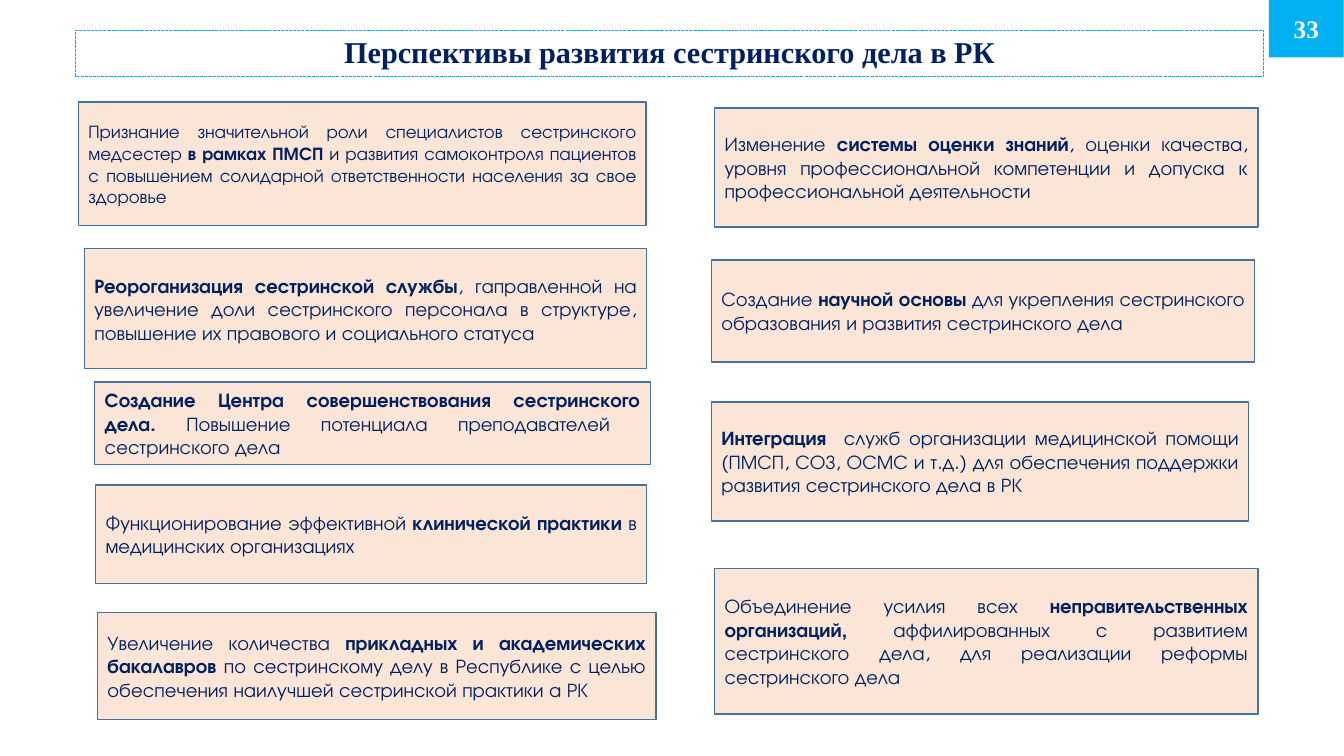
from pptx import Presentation
from pptx import util as u
from pptx.dml.color import RGBColor
from pptx.enum import dml, shapes, text

COLORS = {"navy": "002060", "cyan": "00B0F0", "peach": "FBE5D6", "steel": "43739E", "white": "FFFFFF"}
SERIF, SANS = "Times New Roman", "TeX Gyre Adventor"

GOALS = [
    ((1.98, 2.57, 14.3, 3.12), 13, [
        ("Признание значительной роли специалистов сестринского медсестер ", False),
        ("в рамках ПМСП ", True),
        ("и развития самоконтроля пациентов с повышением солидарной ответственности населения за свое здоровье", False)]),
    ((2.13, 6.27, 14.17, 3.02), 14, [
        ("Реороганизация сестринской службы", True),
        (", гаправленной на увеличение доли сестринского персонала в структуре, "
         "повышение их правового и социального статуса", False)]),
    ((2.39, 9.63, 14, 2.08), 14, [
        ("Создание Центра совершенствования сестринского дела. ", True),
        ("Повышение потенциала преподавателей  сестринского дела", False)]),
    ((2.41, 12.22, 13.89, 2.49), 14, [
        ("Функционирование эффективной ", False),
        ("клинической практики ", True),
        ("в медицинских организациях", False)]),
    ((2.46, 15.44, 14.07, 2.69), 14, [
        ("Увеличение количества ", False),
        ("прикладных и академических бакалавров", True),
        (" по сестринскому делу в Республике с целью обеспечения наилучшей сестринской практики а РК", False)]),
    ((18.01, 2.72, 13.69, 3), 14, [
        ("Изменение ", False),
        ("системы оценки знаний", True),
        (", оценки качества, уровня профессиональной компетенции и допуска к профессиональной деятельности", False)]),
    ((17.93, 6.55, 13.69, 2.57), 14, [
        ("Создание ", False),
        ("научной основы", True),
        (" для укрепления сестринского образования и развития сестринского дела", False)]),
    ((17.93, 10.13, 13.54, 3), 14, [
        ("Интеграция", True),
        ("  служб организации медицинской помощи (ПМСП, СОЗ, ОСМС и т.д.) "
         "для обеспечения поддержки развития сестринского дела в РК", False)]),
    ((18.01, 14.33, 13.69, 3.66), 14, [
        ("Объединение усилия всех ", False),
        ("неправительственных организаций,", True),
        (" аффилированных с развитием сестринского дела, для реализации реформы сестринского дела", False)]),
]


class SlideBuilder:
    """Holds the style and the current slide."""

    def __init__(self, presentation):
        self.slide = presentation.slides.add_slide(presentation.slide_layouts[5])

    def color(self, name):
        return RGBColor.from_string(COLORS[name])

    def add_text(self, shape, runs, size, font, color, align):
        frame = shape.text_frame
        frame.word_wrap = True
        frame.auto_size = text.MSO_AUTO_SIZE.NONE
        frame.vertical_anchor = text.MSO_ANCHOR.MIDDLE
        paragraph = frame.paragraphs[0]
        paragraph.alignment = align
        for words, bold in runs:
            run = paragraph.add_run()
            run.text = words
            run.font.name = font
            run.font.size = u.Pt(size)
            run.font.bold = bold
            run.font.color.rgb = self.color(color)
        return paragraph

    def title(self, box, words):
        shape = self.slide.shapes.title
        shape.left, shape.top, shape.width, shape.height = map(u.Cm, box)
        shape.line.color.rgb = self.color("cyan")
        shape.line.width = u.Pt(0.75)
        shape.line.dash_style = dml.MSO_LINE.SQUARE_DOT
        paragraph = self.add_text(shape, [(words, True)], 21.6, SERIF, "navy", text.PP_ALIGN.CENTER)
        paragraph.line_spacing = 0.9

    def rectangle(self, box, fill):
        shape = self.slide.shapes.add_shape(shapes.MSO_SHAPE.RECTANGLE, *map(u.Cm, box))
        shape.shadow.inherit = False
        shape.fill.solid()
        shape.fill.fore_color.rgb = self.color(fill)
        return shape

    def goal(self, box, size, runs):
        shape = self.rectangle(box, "peach")
        shape.line.color.rgb = self.color("steel")
        shape.line.width = u.Pt(1)
        paragraph = self.add_text(shape, runs, size, SANS, "navy", text.PP_ALIGN.JUSTIFY)
        paragraph.space_before = u.Pt(0.2 * size)

    def page_number(self, box, number):
        shape = self.rectangle(box, "cyan")
        shape.line.fill.background()
        self.add_text(shape, [(number, True)], 18, SERIF, "white", text.PP_ALIGN.CENTER)


def main():
    presentation = Presentation()
    presentation.slide_width, presentation.slide_height = u.Cm(33.87), u.Cm(19.05)
    builder = SlideBuilder(presentation)
    builder.title((1.9, 0.76, 29.95, 1.17), "Перспективы развития сестринского дела в РК")
    for box, size, runs in GOALS:
        builder.goal(box, size, runs)
    builder.page_number((31.98, 0, 1.88, 1.45), "33")
    presentation.save("out.pptx")


if __name__ == "__main__":
    main()
